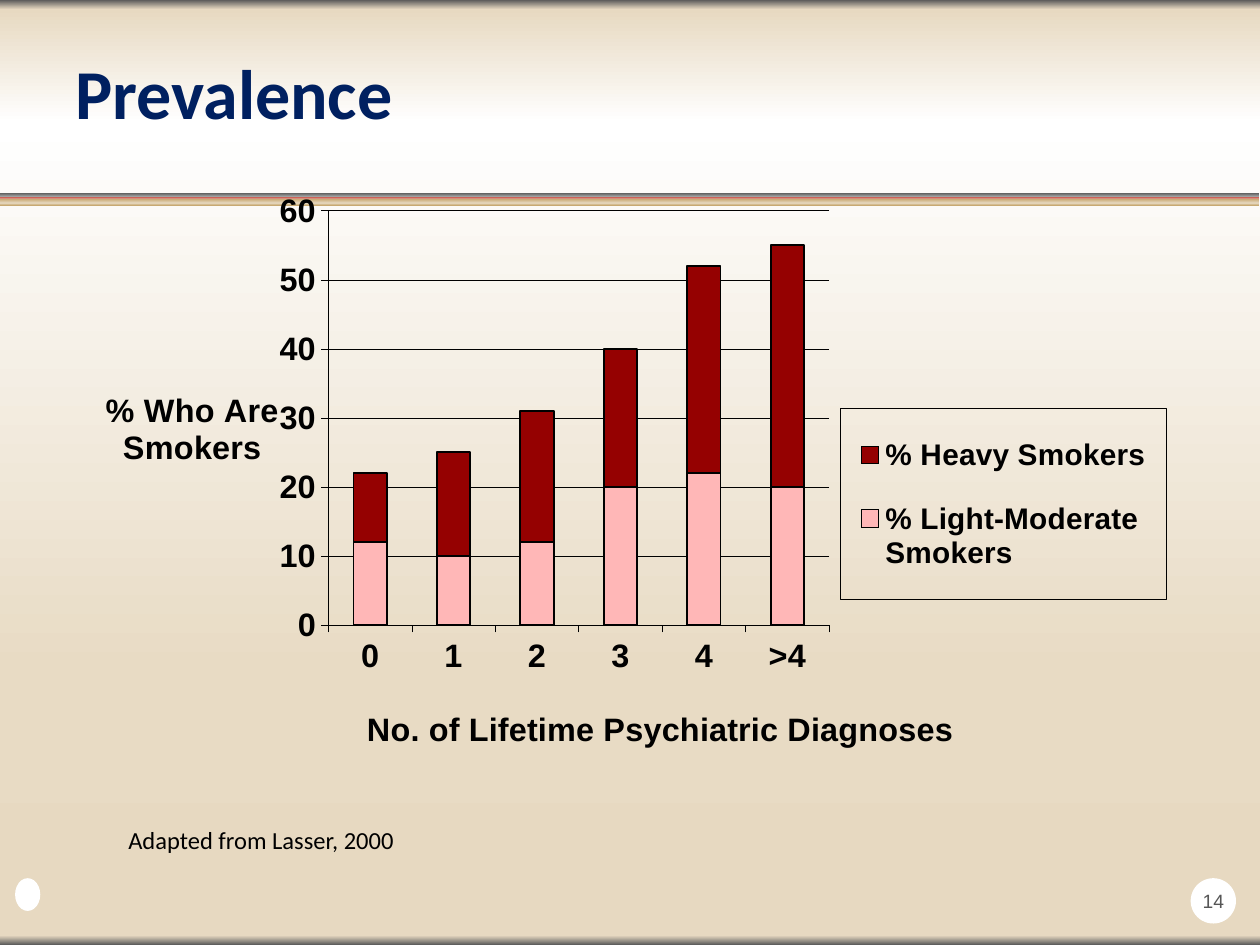
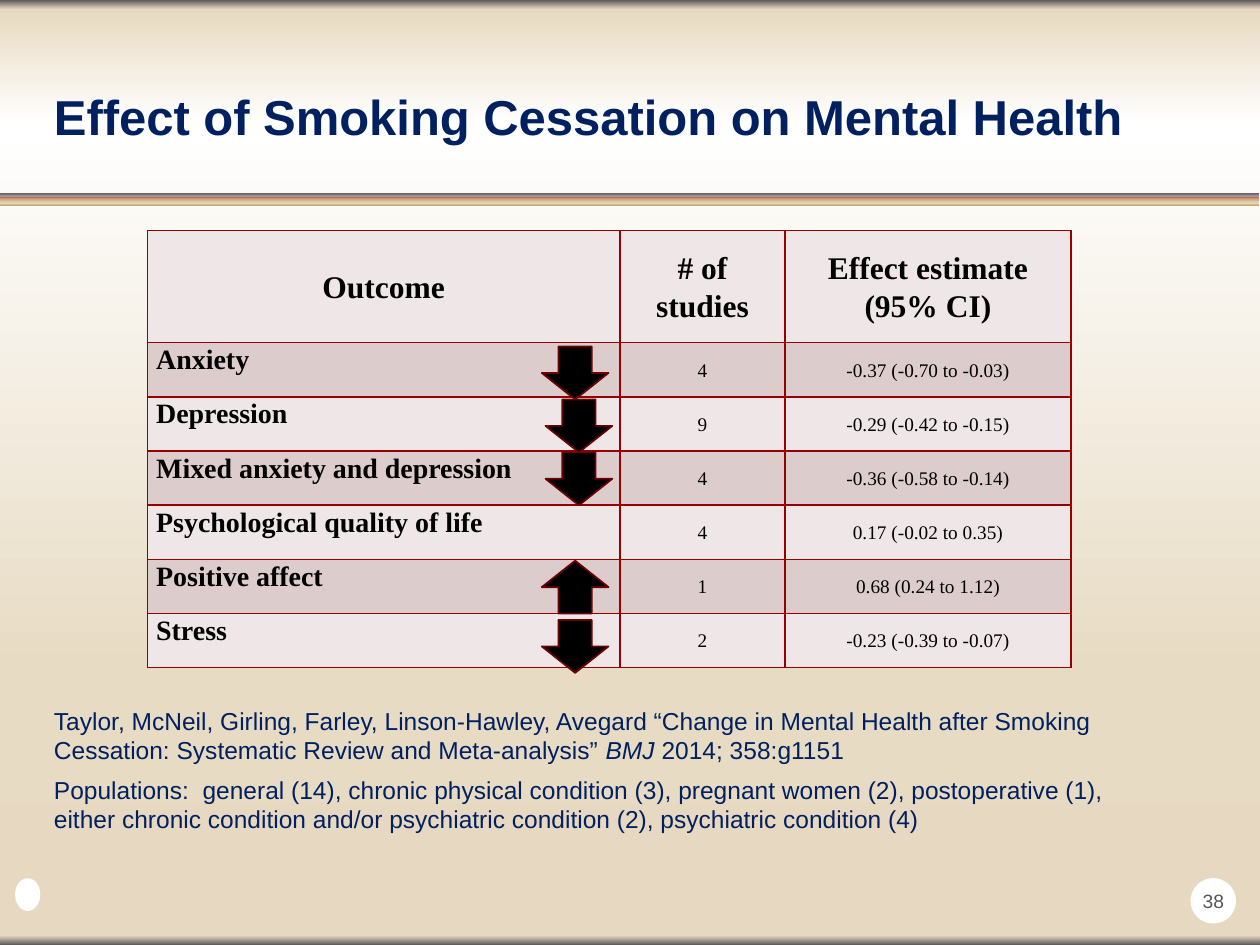
from lxml.etree import SubElement
from pptx import Presentation
from pptx.chart.data import CategoryChartData
from pptx.dml.color import RGBColor
from pptx.enum.chart import XL_CHART_TYPE, XL_LEGEND_POSITION, XL_TICK_LABEL_POSITION, XL_TICK_MARK
from pptx.enum.shapes import MSO_SHAPE
from pptx.enum.text import MSO_ANCHOR, PP_ALIGN
from pptx.oxml import parse_xml
from pptx.oxml.ns import nsdecls, qn
from pptx.util import Inches, Pt

NAVY, BLACK, WHITE, GRAY = "002060", "000000", "FFFFFF", "565656"
RED, PINK, ARROW_EDGE = "950101", "FFB7B7", "6E0101"
HEADER_FILL, BAND_FILL = "EFE7E7", "DDCCCC"
BACKDROP = [(0, "595959"), (1, "E7D9C1"), (13, WHITE), (71, "E8DBC4"), (99, "E7D9C1"), (100, "595959")]
STRIPES = [
    (1.53, [(0, GRAY), (66, "A7A7A7"), (100, GRAY)]),
    (1.56, [(0, "B70101"), (26, "DBA391"), (63, "B70101")]),
    (1.58, [(0, "C8A972"), (66, "E7D9C1"), (100, "C8A972")]),
]


def rgb(color):
    return RGBColor.from_string(color)


def style_font(font, size, name="Arial", color=BLACK, bold=False):
    font.size, font.name, font.bold = Pt(size), name, bold
    font.color.rgb = rgb(color)


def fill_gradient(fill, owner, stops):
    fill.gradient()
    fill.gradient_angle = 270
    stop_list = owner.xpath(".//a:gsLst")[0]
    for stop in list(stop_list):
        stop_list.remove(stop)
    for percent, color in stops:
        stop = SubElement(stop_list, qn("a:gs"), pos=str(percent * 1000))
        SubElement(stop, qn("a:srgbClr"), val=color)


def place_in_chart(part, index, inner=False, **fractions):
    for layout in part.findall(qn("c:layout")):
        part.remove(layout)
    layout = parse_xml(f"<c:layout {nsdecls('c')}><c:manualLayout/></c:layout>")
    manual = layout[0]
    if inner:
        SubElement(manual, qn("c:layoutTarget"), val="inner")
    for side in ("x", "y"):
        SubElement(manual, qn(f"c:{side}Mode"), val="edge")
    for side, fraction in fractions.items():
        SubElement(manual, qn(f"c:{side}"), val=str(fraction))
    part.insert(index, layout)


class Deck:
    def __init__(self):
        self.presentation = Presentation()
        self.presentation.slide_width = Inches(10)
        self.presentation.slide_height = Inches(7.5)
        self.slide = None

    def start_slide(self, number):
        self.slide = self.presentation.slides.add_slide(self.presentation.slide_layouts[6])
        fill_gradient(self.slide.background.fill, self.slide.element, BACKDROP)
        self.shape(MSO_SHAPE.OVAL, 0.12, 6.97, 0.2, 0.26, WHITE)
        for top, stops in STRIPES:
            stripe = self.shape(MSO_SHAPE.RECTANGLE, 0, top, 9.99, 0.05)
            fill_gradient(stripe.fill, stripe.element, stops)
        badge = self.shape(MSO_SHAPE.OVAL, 9.45, 6.97, 0.36, 0.36, WHITE)
        frame = badge.text_frame
        frame.margin_left = frame.margin_right = frame.margin_top = frame.margin_bottom = 0
        frame.word_wrap = False
        frame.vertical_anchor = MSO_ANCHOR.MIDDLE
        frame.text = str(number)
        frame.paragraphs[0].alignment = PP_ALIGN.CENTER
        style_font(frame.paragraphs[0].font, 11, color=GRAY)

    def shape(self, kind, left, top, width, height, fill=None, line=None):
        shape = self.slide.shapes.add_shape(kind, Inches(left), Inches(top), Inches(width), Inches(height))
        shape.shadow.inherit = False
        if fill:
            shape.fill.solid()
            shape.fill.fore_color.rgb = rgb(fill)
        if line:
            shape.line.color.rgb = rgb(line)
            shape.line.width = Pt(1)
        else:
            shape.line.fill.background()
        return shape

    def text(self, left, top, width, height, paragraphs, size, name="Arial", color=BLACK, bold=False, gap=0):
        box = self.slide.shapes.add_textbox(Inches(left), Inches(top), Inches(width), Inches(height))
        frame = box.text_frame
        frame.word_wrap = True
        for index, runs in enumerate(paragraphs):
            paragraph = frame.add_paragraph() if index else frame.paragraphs[0]
            if index:
                paragraph.space_before = Pt(gap)
            style_font(paragraph.font, size, name, color, bold)
            for words, italic in runs:
                run = paragraph.add_run()
                run.text = words
                if italic:
                    run.font.italic = True
        return frame

    def title(self, left, top, width, height, words, size, name):
        frame = self.text(left, top, width, height, [[(words, False)]], size, name, NAVY, True)
        frame.vertical_anchor = MSO_ANCHOR.BOTTOM
        frame.margin_bottom = Inches(0.1)

    def axis(self, axis, title, x, y):
        axis.major_tick_mark = XL_TICK_MARK.OUTSIDE
        axis.minor_tick_mark = XL_TICK_MARK.NONE
        axis.format.line.color.rgb = rgb(BLACK)
        axis.format.line.width = Pt(0.25)
        style_font(axis.tick_labels.font, 18.5, bold=True)
        frame = axis.axis_title.text_frame
        frame.text = title
        style_font(frame.paragraphs[0].font, 18.5, bold=True)
        body = axis.axis_title.element.xpath(".//a:bodyPr")[0]
        body.set("rot", "0")
        body.set("vert", "horz")
        place_in_chart(axis.axis_title.element, 1, x=x, y=y)

    def stacked_chart(self, left, top, width, height, categories, series, category_title, value_title):
        data = CategoryChartData()
        data.categories = categories
        for name, values, _ in series:
            data.add_series(name, values)
        chart = self.slide.shapes.add_chart(
            XL_CHART_TYPE.COLUMN_STACKED, Inches(left), Inches(top), Inches(width), Inches(height), data
        ).chart
        chart.has_title = False
        style_font(chart.font, 18.5, bold=True)
        plot = chart.plots[0]
        plot.vary_by_categories = False
        plot.gap_width, plot.overlap = 150, 100
        for bars, (_, _, color) in zip(plot.series, series):
            bars.format.fill.solid()
            bars.format.fill.fore_color.rgb = rgb(color)
            bars.format.line.color.rgb = rgb(BLACK)
            bars.format.line.width = Pt(1)
        self.axis(chart.category_axis, category_title, 0.26, 0.81)
        chart.category_axis.tick_label_position = XL_TICK_LABEL_POSITION.LOW
        scale = chart.value_axis
        self.axis(scale, value_title, 0.02, 0.31)
        scale.minimum_scale, scale.maximum_scale, scale.major_unit = 0, 60, 10
        scale.major_gridlines.format.line.color.rgb = rgb(BLACK)
        scale.major_gridlines.format.line.width = Pt(0.25)
        chart.has_legend = True
        chart.legend.position = XL_LEGEND_POSITION.RIGHT
        chart.legend.include_in_layout = False
        style_font(chart.legend.font, 17, bold=True)
        legend = chart.element.xpath(".//c:legend")[0]
        place_in_chart(legend, 1, x=0.7, y=0.35, w=0.3, h=0.3)
        legend.find(qn("c:txPr")).addprevious(parse_xml(
            f'<c:spPr {nsdecls("c", "a")}><a:noFill/><a:ln w="3175"><a:solidFill>'
            f'<a:srgbClr val="{BLACK}"/></a:solidFill></a:ln></c:spPr>'
        ))
        place_in_chart(chart.element.xpath(".//c:plotArea")[0], 0, True, x=0.23, y=0.04, w=0.46, h=0.65)

    def cell(self, cell, words, size, fill, bold, centered):
        cell.margin_left = cell.margin_right = Inches(0.07)
        cell.margin_top = cell.margin_bottom = 0
        properties = cell._tc.get_or_add_tcPr()
        for side in "LRTB":
            properties.append(parse_xml(
                f'<a:ln{side} {nsdecls("a")} w="12700"><a:solidFill>'
                f'<a:srgbClr val="{RED}"/></a:solidFill></a:ln{side}>'
            ))
        cell.fill.solid()
        cell.fill.fore_color.rgb = rgb(fill)
        cell.text = words
        paragraph = cell.text_frame.paragraphs[0]
        paragraph.line_spacing = 1.07
        style_font(paragraph.font, size, "Times New Roman", bold=bold)
        if centered:
            paragraph.alignment = PP_ALIGN.CENTER
            cell.vertical_anchor = MSO_ANCHOR.MIDDLE

    def table(self, left, top, widths, heights, rows):
        table = self.slide.shapes.add_table(
            len(rows), len(widths), Inches(left), Inches(top), Inches(sum(widths)), Inches(sum(heights))
        ).table
        table.horz_banding = False
        for column, width in zip(table.columns, widths):
            column.width = Inches(width)
        for r, (row, height) in enumerate(zip(rows, heights)):
            table.rows[r].height = Inches(height)
            for c, words in enumerate(row):
                size = 18 if r == 0 else 16 if c == 0 else 11
                fill = BAND_FILL if r % 2 else HEADER_FILL
                self.cell(table.cell(r, c), words, size, fill, r == 0 or c == 0, r == 0 or c > 0)


def build_prevalence(deck):
    deck.start_slide(14)
    deck.title(0.5, 0.08, 9, 1.08, "Prevalence", 40, "Calibri")
    deck.stacked_chart(
        0.62, 1.47, 8.64, 5.06,
        ["0", "1", "2", "3", "4", ">4"],
        [
            ("% Light-Moderate Smokers", [12, 10, 12, 20, 22, 20], PINK),
            ("% Heavy Smokers", [10, 15, 19, 20, 30, 35], RED),
        ],
        "No. of Lifetime Psychiatric Diagnoses",
        "% Who Are Smokers",
    )
    deck.text(0.92, 6.5, 3, 0.34, [[("Adapted from Lasser, 2000", False)]], 14, "Calibri")


def build_cessation(deck):
    deck.start_slide(38)
    deck.title(0.33, 0.42, 9.37, 0.83, "Effect of Smoking Cessation on Mental Health", 28, "Arial")
    citation = [
        ("Taylor, McNeil, Girling, Farley, Linson-Hawley, Avegard “Change in Mental Health after Smoking "
         "Cessation: Systematic Review and Meta-analysis” ", False),
        ("BMJ", True),
        (" 2014; 358:g1151", False),
    ]
    populations = [
        ("Populations:  general (14), chronic physical condition (3), pregnant women (2), postoperative (1), "
         "either chronic condition and/or psychiatric condition (2), psychiatric condition (4)", False),
    ]
    deck.text(0.33, 5.55, 9, 1.15, [citation, populations], 14, color=NAVY, gap=5.8)
    deck.table(1.17, 1.83, [3.75, 1.31, 2.27], [0.89] + [0.43] * 6, [
        ("Outcome", "# of studies", "Effect estimate (95% CI)"),
        ("Anxiety", "4", "-0.37 (-0.70 to -0.03)"),
        ("Depression", "9", "-0.29 (-0.42 to -0.15)"),
        ("Mixed anxiety and depression", "4", "-0.36 (-0.58 to -0.14)"),
        ("Psychological quality of life", "4", "0.17 (-0.02 to 0.35)"),
        ("Positive affect", "1", "0.68 (0.24 to 1.12)"),
        ("Stress", "2", "-0.23 (-0.39 to -0.07)"),
    ])
    decrease, increase = MSO_SHAPE.DOWN_ARROW, MSO_SHAPE.UP_ARROW
    for direction, left, top in [
        (decrease, 4.3, 2.75), (decrease, 4.33, 3.17), (decrease, 4.33, 3.59),
        (decrease, 4.3, 4.92), (increase, 4.3, 4.45),
    ]:
        deck.shape(direction, left, top, 0.53, 0.42, BLACK, ARROW_EDGE)


def main():
    deck = Deck()
    build_prevalence(deck)
    build_cessation(deck)
    deck.presentation.save("out.pptx")


if __name__ == "__main__":
    main()
